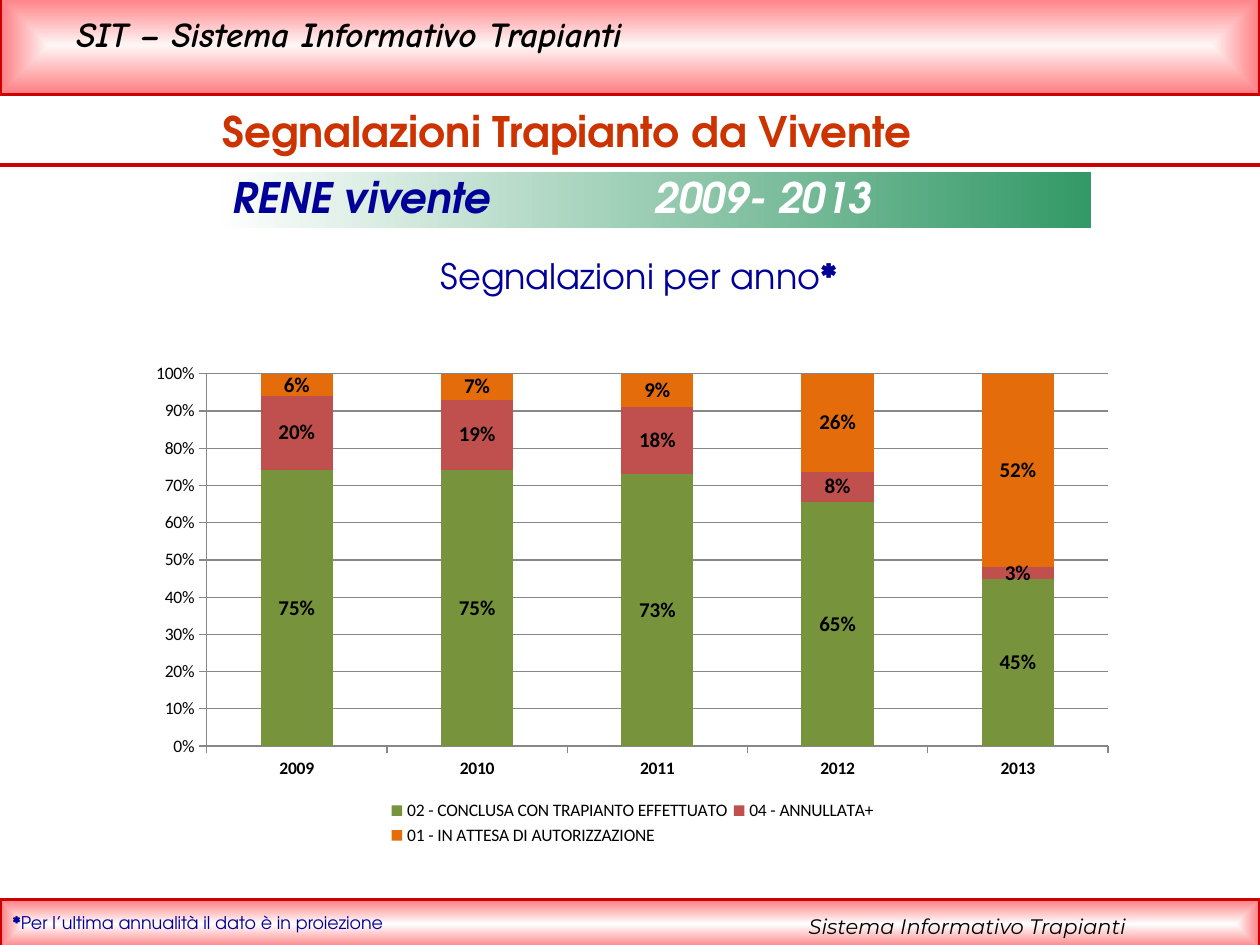
from lxml import etree
from pptx import Presentation
from pptx.chart.data import CategoryChartData
from pptx.dml.color import RGBColor
from pptx.enum.chart import XL_CHART_TYPE, XL_LABEL_POSITION, XL_LEGEND_POSITION, XL_TICK_MARK
from pptx.enum.shapes import MSO_CONNECTOR, MSO_SHAPE
from pptx.enum.text import MSO_ANCHOR, PP_ALIGN
from pptx.oxml import parse_xml
from pptx.oxml.ns import nsdecls, qn
from pptx.util import Pt

STACKED_100 = XL_CHART_TYPE.COLUMN_STACKED_100
LABEL_CENTER = XL_LABEL_POSITION.CENTER
LEGEND_BOTTOM = XL_LEGEND_POSITION.BOTTOM
TICK_OUT = XL_TICK_MARK.OUTSIDE
STRAIGHT = MSO_CONNECTOR.STRAIGHT
RECT = MSO_SHAPE.RECTANGLE
TOP, MIDDLE = MSO_ANCHOR.TOP, MSO_ANCHOR.MIDDLE
LEFT, CENTER = PP_ALIGN.LEFT, PP_ALIGN.CENTER

COLORS = {
    "black": "000000", "white": "FFFFFF", "blush": "FFF6F6", "pink": "FF7C80",
    "red": "CC0000", "title": "CC3300", "navy": "000099", "sea": "339966",
    "grid": "878787", "done": "77933C", "cancelled": "C0504D", "waiting": "E46C0A",
}
MAIN_FONT = "TeX Gyre Adventor"
YEARS = ["2009", "2010", "2011", "2012", "2013"]
SERIES = [
    ("02 - CONCLUSA CON TRAPIANTO EFFETTUATO", "done", (0.75, 0.75, 0.73, 0.65, 0.45)),
    ("04 - ANNULLATA+", "cancelled", (0.20, 0.19, 0.18, 0.08, 0.03)),
    ("01 - IN ATTESA DI AUTORIZZAZIONE", "waiting", (0.06, 0.07, 0.09, 0.26, 0.52)),
]


def rgb(name):
    return RGBColor.from_string(COLORS[name])


def set_font(font, color="black", **values):
    for key, value in values.items():
        setattr(font, key, value)
    font.color.rgb = rgb(color)


def set_layout(parent, index, inner=False, **fractions):
    """Place a chart part by fractions of the chart's size."""
    for old in parent.findall(qn("c:layout")):
        parent.remove(old)
    layout = parse_xml(f"<c:layout {nsdecls('c')}><c:manualLayout/></c:layout>")
    values = {"layoutTarget": "inner"} if inner else {}
    values.update(xMode="edge", yMode="edge", **fractions)
    for tag, value in values.items():
        etree.SubElement(layout[0], qn(f"c:{tag}")).set("val", str(value))
    parent.insert(index, layout)


class SlideBuilder:
    def __init__(self, slide):
        self.s = slide

    def gradient_box(self, box, start, end, line=None, to_center=False):
        sp = self.s.shapes.add_shape(RECT, *map(Pt, box))
        sp.shadow.inherit = False
        sp.fill.gradient()
        sp.fill.gradient_angle = 0
        for stop, color in zip(sp.fill.gradient_stops, (start, end)):
            stop.color.rgb = rgb(color)
        if to_center:
            grad = sp.element.spPr.find(qn("a:gradFill"))
            grad.replace(grad.find(qn("a:lin")), parse_xml(
                f'<a:path {nsdecls("a")} path="shape"><a:fillToRect '
                'l="50000" t="50000" r="50000" b="50000"/></a:path>'))
        if line:
            sp.line.color.rgb = rgb(line)
            sp.line.width = Pt(2)
        else:
            sp.line.fill.background()

    def rule(self, y, color):
        line = self.s.shapes.add_connector(STRAIGHT, Pt(0), Pt(y), Pt(720), Pt(y))
        line.line.color.rgb = rgb(color)
        line.line.width = Pt(2)
        etree.SubElement(line.element.spPr, qn("a:effectLst"))

    def text(self, box, runs, size, font=MAIN_FONT, align=LEFT, anchor=TOP,
             spacing=None, tab=None):
        """Add one paragraph; runs are (text, colour, extra font values)."""
        tf = self.s.shapes.add_textbox(*map(Pt, box)).text_frame
        tf.word_wrap = True
        tf.vertical_anchor = anchor
        p = tf.paragraphs[0]
        p.alignment = align
        if spacing:
            p.line_spacing = spacing
        if tab:
            tabs = etree.SubElement(p._p.get_or_add_pPr(), qn("a:tabLst"))
            etree.SubElement(tabs, qn("a:tab"), pos=str(Pt(tab)), algn="l")
        for text, color, style in runs:
            r = p.add_run()
            r.text = text
            set_font(r.font, color, name=font, size=Pt(size), **style)

    def stacked_chart(self, box, categories, series):
        data = CategoryChartData(number_format="0%")
        data.categories = categories
        for name, _, values in series:
            data.add_series(name, values)
        chart = self.s.shapes.add_chart(STACKED_100, *map(Pt, box), data).chart
        set_font(chart.font, name="Calibri", size=Pt(10))
        chart.has_title = False

        plot = chart.plots[0]
        plot.gap_width, plot.overlap = 150, 100
        plot.vary_by_categories = False
        for ser, (_, color, _) in zip(plot.series, series):
            ser.format.fill.solid()
            ser.format.fill.fore_color.rgb = rgb(color)
            labels = ser.data_labels
            options = {"show_value": True, "number_format": "0%",
                       "number_format_is_linked": False, "position": LABEL_CENTER}
            for key, value in options.items():
                setattr(labels, key, value)
            set_font(labels.font, name="Calibri", size=Pt(12), bold=True)

        cat, val = chart.category_axis, chart.value_axis
        for axis in (cat, val):
            axis.major_tick_mark = TICK_OUT
            axis.format.line.color.rgb = rgb("grid")
        set_font(cat.tick_labels.font, name="Calibri", size=Pt(10), bold=True)
        val.minimum_scale, val.maximum_scale, val.major_unit = 0, 1, 0.1
        val.major_gridlines.format.line.color.rgb = rgb("grid")
        val.tick_labels.number_format = "0%"
        val.tick_labels.number_format_is_linked = False

        chart.has_legend = True
        chart.legend.position = LEGEND_BOTTOM
        chart.legend.include_in_layout = False
        root = chart.element
        set_layout(root.find(".//" + qn("c:plotArea")), 0, inner=True,
                   x=0.07, y=0.04, w=0.91, h=0.75)
        set_layout(root.find(".//" + qn("c:legend")), 1, x=0.25, y=0.89, w=0.5, h=0.11)


def main():
    prs = Presentation()
    prs.slide_width, prs.slide_height = Pt(720), Pt(540)
    b = SlideBuilder(prs.slides.add_slide(prs.slide_layouts[6]))
    bold, italic = {"bold": True}, {"italic": True}
    both = {**bold, **italic}

    b.gradient_box((0, -2, 720, 56), "blush", "pink", "red", to_center=True)
    b.text((36.7, 3.6, 646.6, 31), [("SIT – Sistema Informativo Trapianti", "black", both)],
           20, font="Comic Neue")
    b.gradient_box((0, 514, 720, 28), "white", "pink", "red", to_center=True)
    b.rule(94.3, "red")
    b.text((455, 518.4, 240, 21.6), [("Sistema Informativo Trapianti", "black", italic)],
           12, font="Montserrat")

    b.text((0, 51, 648, 44.6), [("Segnalazioni Trapianto da Vivente", "title", bold)],
           24, align=CENTER, anchor=MIDDLE, spacing=1.1)
    b.gradient_box((122.4, 98.6, 501, 31.7), "white", "sea")
    b.text((126, 94.3, 494.6, 47.5),
           [("RENE vivente\t", "navy", both), ("2009- 2013", "white", both)], 24, tab=241)
    b.text((244.8, 141.8, 246.2, 31.7),
           [("Segnalazioni per anno", "navy", {}), ("*", "navy", bold)], 20)
    b.stacked_chart((78.5, 202.3, 566, 283.7), YEARS, SERIES)
    b.text((0, 517.7, 367.2, 19.4),
           [("*", "navy", bold),
            ("Per l’ultima annualità il dato è in proiezione", "navy", {})], 10)
    prs.save("out.pptx")


if __name__ == "__main__":
    main()
